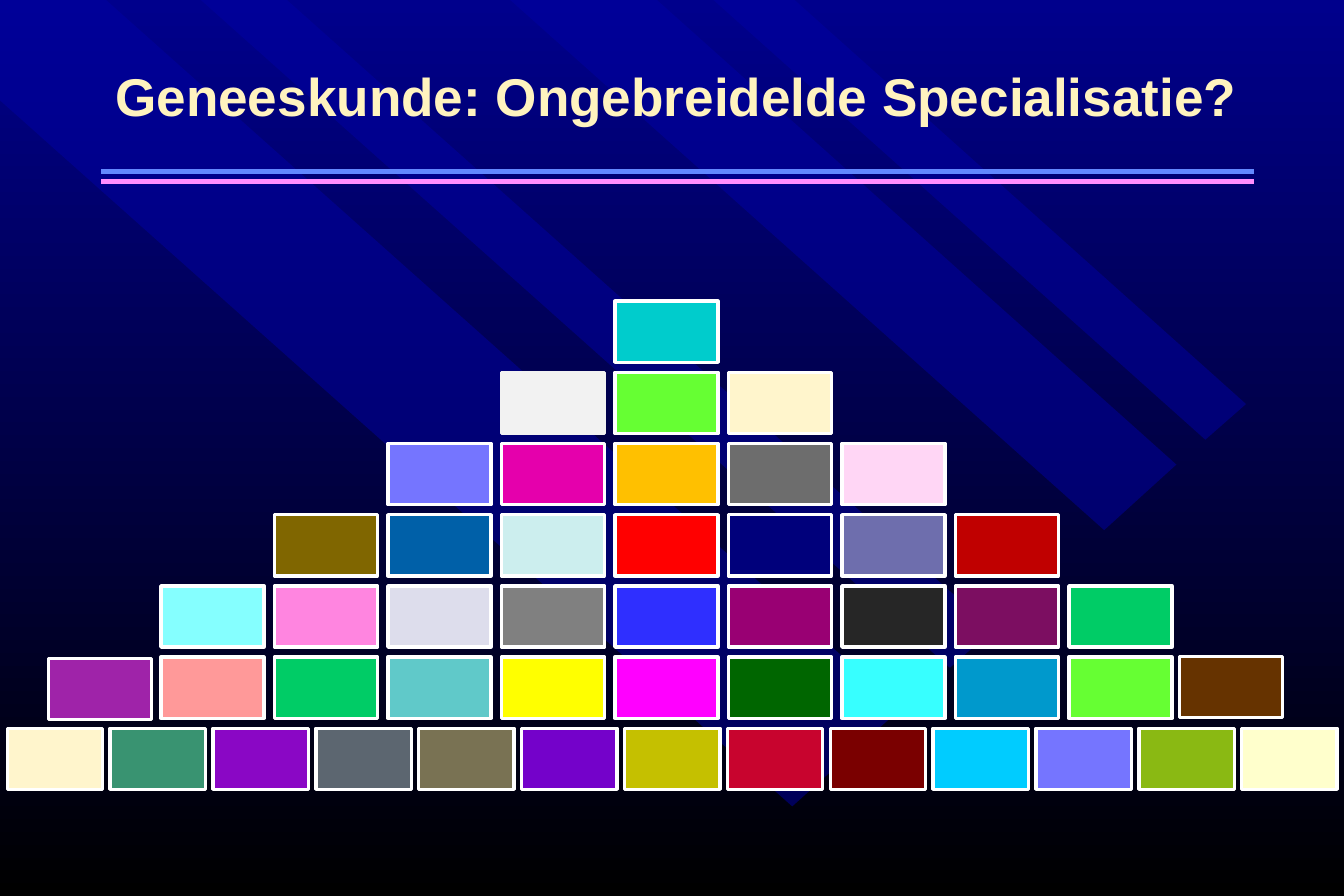
from pptx import Presentation
from pptx.dml.color import RGBColor
from pptx.enum.shapes import MSO_CONNECTOR as Conn, MSO_SHAPE as Shape
from pptx.enum.text import MSO_ANCHOR as Anchor, PP_ALIGN as Align
from pptx.oxml import parse_xml
from pptx.oxml.ns import nsdecls, qn
from pptx.util import Pt

NAVY = RGBColor(0x00, 0x00, 0x8C)
BLACK = RGBColor(0x00, 0x00, 0x00)
BEAM = RGBColor(0x00, 0x00, 0xA4)
CREAM = RGBColor(0xFF, 0xF3, 0xBF)
BLUE = RGBColor(0x63, 0x88, 0xFF)
PINK = RGBColor(0xFF, 0x8D, 0xFF)
WHITE = RGBColor(0xFF, 0xFF, 0xFF)
PALE = RGBColor(0xF2, 0xF2, 0xF2)
ROWS = [[RGBColor.from_string(code) for code in row.split()] for row in (
    "00CCCC",
    "F2F2F2 66FF33 FFF5CC",
    "7575FF E500AC FFC000 6D6D6D FFD6F5",
    "806600 0060A8 CCEEEE FF0000 00007B 6E6EAD C00000",
    "85FFFF FF85E0 DDDDEC 808080 2F2FFF 990073 262626 7C0E61 00CC66",
    "9F23A9 FF9999 00CC66 60C9C9 FFFF00 FF00FF 006600 37FFFF 0099CC 66FF33 663300",
    "FFF5CC 399371 8A07C5 5C6670 797253 7402CA C5C000 C8042E 7A0000 00CCFF 7575FF"
    " 8AB913 FFFFCC",
)]

deck = Presentation()
deck.slide_width, deck.slide_height = Pt(810), Pt(540)
slide = deck.slides.add_slide(deck.slide_layouts[6])
shapes = slide.shapes

back = slide.background.fill
back.gradient()
back.gradient_angle = 270
for stop, place, color in zip(back.gradient_stops, (0, 1), (NAVY, BLACK)):
    stop.position = place
    stop.color.rgb = color


def add_text(text, left, top, width, height, size, color, font="Arial", bold=False):
    box = shapes.add_textbox(Pt(left), Pt(top), Pt(width), Pt(height))
    frame = box.text_frame
    frame.word_wrap = True
    frame.vertical_anchor = Anchor.MIDDLE
    para = frame.paragraphs[0]
    para.alignment = Align.CENTER
    para.line_spacing = 0.9
    run = para.add_run()
    run.text = text
    run.font.size = Pt(size)
    run.font.name = font
    run.font.bold = bold
    run.font.color.rgb = color
    run.font._element.find(qn("a:solidFill")).addnext(parse_xml(
        f'<a:effectLst {nsdecls("a")}><a:outerShdw dist="38100" dir="2700000">'
        '<a:srgbClr val="000000"/></a:outerShdw></a:effectLst>'))


BEAMS = [
    [(543, 427), (64, 0), (0, 0), (0, 60.5), (477.5, 486)],
    [(173, 0), (598.5, 379.5), (572.5, 402.5), (121, 0)],
    [(396, 0), (709, 280), (665.5, 319.5), (307.5, 0)],
    [(430, 0), (726.5, 265), (751, 243.5), (479, 0)],
]
for beam in BEAMS:
    first, *rest = [(Pt(x), Pt(y)) for x, y in beam]
    path = shapes.build_freeform(*first)
    path.add_line_segments(rest, close=True)
    ray = path.convert_to_shape()
    ray.shadow.inherit = False
    ray.fill.solid()
    ray.fill.fore_color.rgb = BEAM
    ray.line.fill.background()
    tint = ray.fill._xPr.find(qn("a:solidFill"))[0]
    tint.append(parse_xml(f'<a:alpha {nsdecls("a")} val="50000"/>'))

add_text("Geneeskunde: Ongebreidelde Specialisatie?", left=42, top=24,
         width=731.5, height=72, size=32, color=CREAM, bold=True)

for y, color in ((103.5, BLUE), (109.5, PINK)):
    rule = shapes.add_connector(Conn.STRAIGHT, Pt(61), Pt(y), Pt(756), Pt(y))
    rule.line.color.rgb = color
    rule.line.width = Pt(3)
    rule._element.spPr.append(parse_xml(f'<a:effectLst {nsdecls("a")}/>'))

NUDGE = {(5, 0): (0.7, 0.9), (5, 10): (-1.7, -0.3)}
BASE = len(ROWS) - 1
for r, row in enumerate(ROWS):
    mid, step, width = (376.4, 62, 57.5) if r == BASE else (370.6, 68.4, 62.1)
    for c, color in enumerate(row):
        dx, dy = NUDGE.get((r, c), (0, 0))
        left = mid + step * (c - len(row) // 2) + dx
        top = 181.5 + 42.9 * r + dy
        block = shapes.add_shape(Shape.RECTANGLE, Pt(left), Pt(top), Pt(width), Pt(36.9))
        block.shadow.inherit = False
        block.fill.solid()
        block.fill.fore_color.rgb = color
        block.line.color.rgb = PALE if color == PALE else WHITE
        block.line.width = Pt(2)

deck.save("out.pptx")
